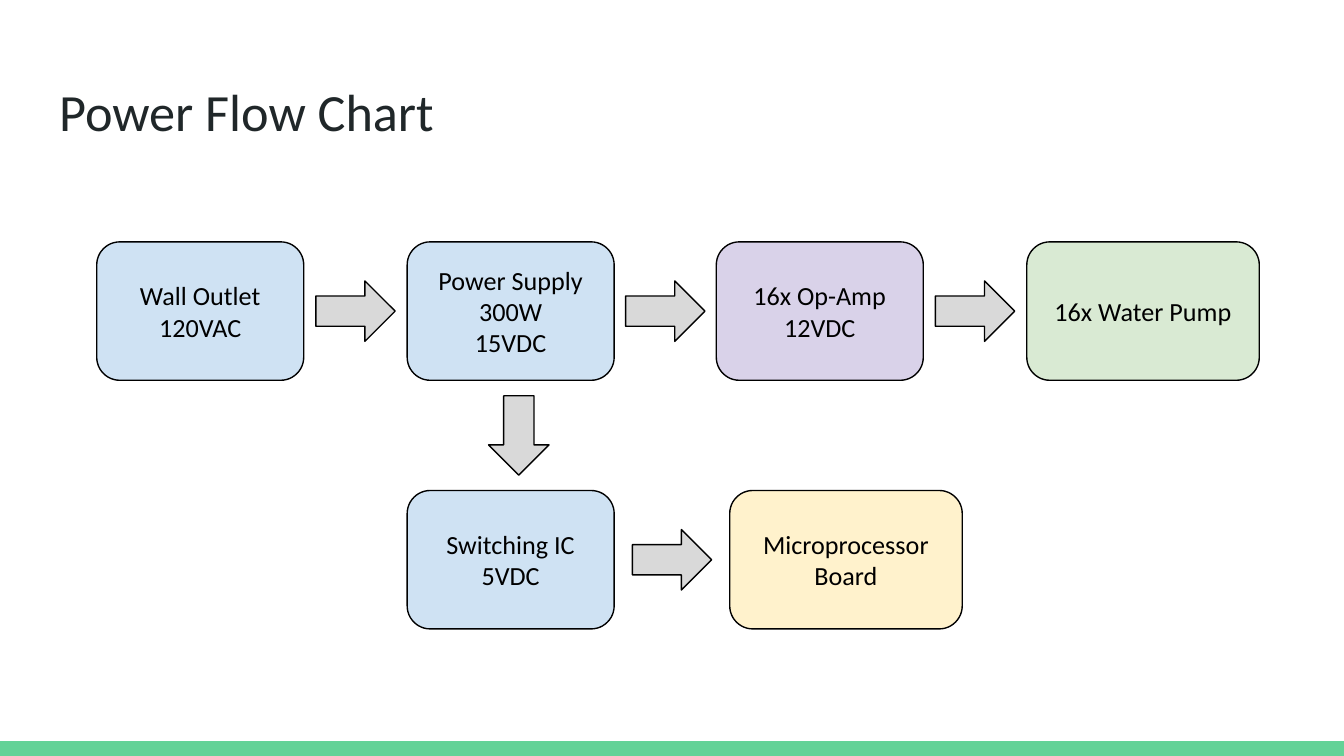
import pptx
from pptx.dml.color import RGBColor
from pptx.enum.shapes import MSO_SHAPE
from pptx.enum.text import MSO_ANCHOR, PP_ALIGN
from pptx.util import Inches, Pt

BLACK = RGBColor(0x00, 0x00, 0x00)
TITLE_COLOR = RGBColor(0x20, 0x27, 0x29)
GREEN_BAR = RGBColor(0x63, 0xD2, 0x97)
ARROW_GRAY = RGBColor(0xD9, 0xD9, 0xD9)
BLUE = RGBColor(0xCF, 0xE2, 0xF3)
PURPLE = RGBColor(0xD9, 0xD2, 0xE9)
GREEN = RGBColor(0xD9, 0xEA, 0xD3)
YELLOW = RGBColor(0xFF, 0xF2, 0xCC)
FONT = "Calibri"

# Content: each row has a top and its stages (text, left, width, fill)
TITLE = "Power Flow Chart"
ROWS = [
    (1.8, [
        ("Wall Outlet\n120VAC", 0.72, 1.54, BLUE),
        ("Power Supply\n300W\n15VDC", 3.03, 1.54, BLUE),
        ("16x Op-Amp\n12VDC", 5.33, 1.54, PURPLE),
        ("16x Water Pump", 7.64, 1.73, GREEN),
    ]),
    (3.65, [
        ("Switching IC\n5VDC", 3.03, 1.54, BLUE),
        ("Microprocessor Board", 5.43, 1.73, YELLOW),
    ]),
]
SLIDE_WIDTH = 10
SLIDE_HEIGHT = SLIDE_WIDTH * 9 / 16
BAR_HEIGHT = 0.11
STAGE_HEIGHT = 1.03
ARROW_WIDTH, ARROW_HEIGHT = 0.59, 0.45
DOWN_ARROW_CENTER = 3.86


def add_filled_shape(slide, kind, left, top, width, height, fill, outlined=True):
    shape = slide.shapes.add_shape(
        kind, Inches(left), Inches(top), Inches(width), Inches(height))
    shape.shadow.inherit = False
    shape.fill.solid()
    shape.fill.fore_color.rgb = fill
    if outlined:
        shape.line.color.rgb = BLACK
        shape.line.width = Pt(0.75)
    else:
        shape.line.fill.background()
    return shape


def format_text(shape, size, color, alignment, anchor):
    frame = shape.text_frame
    frame.word_wrap = True
    frame.vertical_anchor = anchor
    frame.margin_left = frame.margin_right = Inches(0.1)
    frame.margin_top = frame.margin_bottom = Inches(0.1)
    for paragraph in frame.paragraphs:
        paragraph.alignment = alignment
        for run in paragraph.runs:
            run.font.name = FONT
            run.font.size = Pt(size)
            run.font.color.rgb = color


def add_stage(slide, text, left, top, width, fill):
    stage = add_filled_shape(slide, MSO_SHAPE.FLOWCHART_ALTERNATE_PROCESS,
                             left, top, width, STAGE_HEIGHT, fill)
    stage.text_frame.text = text
    format_text(stage, 14, BLACK, PP_ALIGN.CENTER, MSO_ANCHOR.MIDDLE)


def add_arrow(slide, center_x, center_y, rotation=0):
    arrow = add_filled_shape(
        slide, MSO_SHAPE.RIGHT_ARROW, center_x - ARROW_WIDTH / 2,
        center_y - ARROW_HEIGHT / 2, ARROW_WIDTH, ARROW_HEIGHT, ARROW_GRAY)
    arrow.rotation = rotation


def main():
    presentation = pptx.Presentation()
    presentation.slide_width = Inches(SLIDE_WIDTH)
    presentation.slide_height = Inches(SLIDE_HEIGHT)
    slide = presentation.slides.add_slide(presentation.slide_layouts[5])

    # Bottom bar and title
    add_filled_shape(slide, MSO_SHAPE.RECTANGLE, 0, SLIDE_HEIGHT - BAR_HEIGHT,
                     SLIDE_WIDTH, BAR_HEIGHT, GREEN_BAR, outlined=False)
    title = slide.shapes.title
    title.left, title.top = Inches(0.34), Inches(0.49)
    title.width, title.height = Inches(9.32), Inches(0.63)
    title.text_frame.text = TITLE
    format_text(title, 28, TITLE_COLOR, PP_ALIGN.LEFT, MSO_ANCHOR.TOP)

    # Stages, with an arrow centred in each gap of a row
    for top, stages in ROWS:
        for text, left, width, fill in stages:
            add_stage(slide, text, left, top, width, fill)
        for (_, left, width, _), (_, next_left, _, _) in zip(stages, stages[1:]):
            add_arrow(slide, (left + width + next_left) / 2,
                      top + STAGE_HEIGHT / 2)

    # Down arrow midway between the two rows
    (upper_top, _), (lower_top, _) = ROWS
    add_arrow(slide, DOWN_ARROW_CENTER,
              (upper_top + STAGE_HEIGHT + lower_top) / 2, rotation=90)

    presentation.save("out.pptx")


if __name__ == "__main__":
    main()
